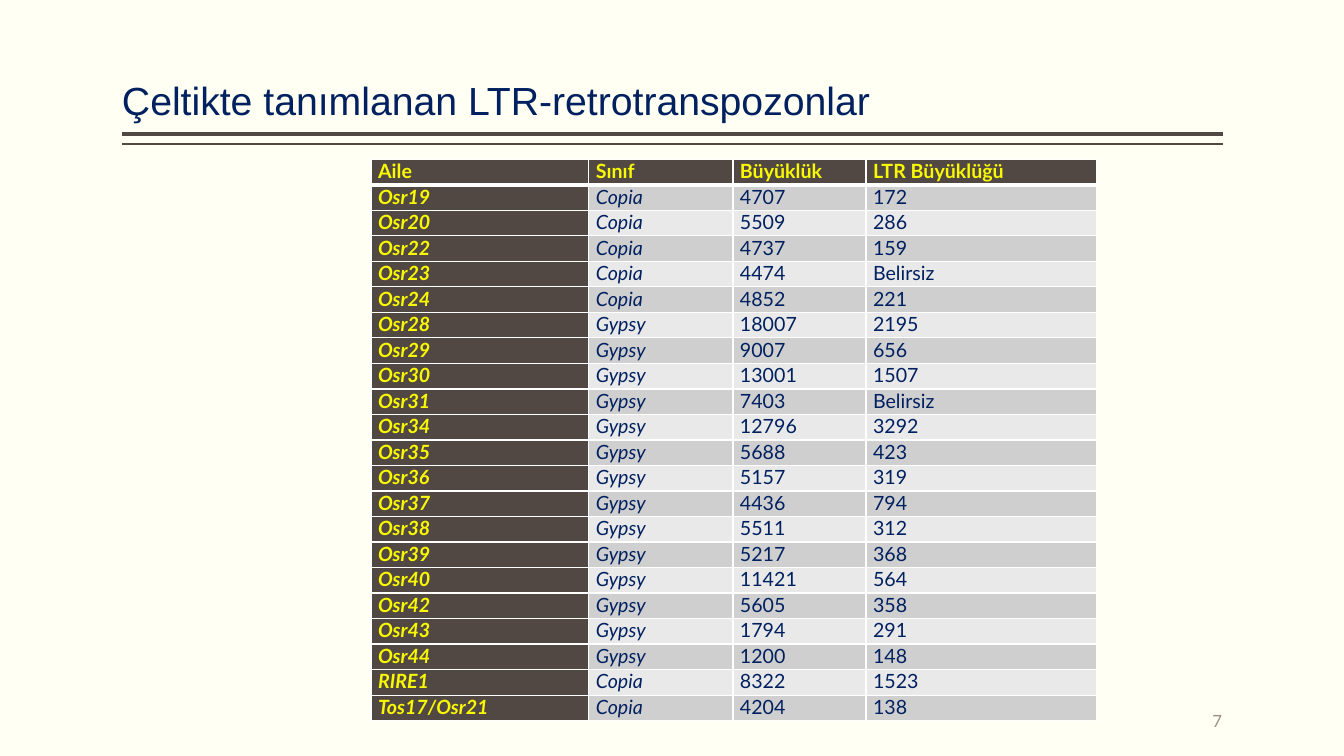
from lxml.etree import SubElement
from pptx import Presentation
from pptx.dml.color import RGBColor
from pptx.enum.shapes import MSO_CONNECTOR
from pptx.enum.text import MSO_ANCHOR as ANCHOR, PP_ALIGN as ALIGN
from pptx.oxml.ns import qn
from pptx.util import Inches, Pt

BROWN, NAVY, YELLOW, WHITE = "514843", "002060", "F9F900", "FFFFFF"
BANDS = ["D0CFCF", "E9E9E9"]
LEFT, RIGHT = 1.21, 12.13
HEADER = ("Aile", "Sınıf", "Büyüklük", "LTR Büyüklüğü")
FAMILIES = [
    ("Osr19", "Copia", "4707", "172"),
    ("Osr20", "Copia", "5509", "286"),
    ("Osr22", "Copia", "4737", "159"),
    ("Osr23", "Copia", "4474", "Belirsiz"),
    ("Osr24", "Copia", "4852", "221"),
    ("Osr28", "Gypsy", "18007", "2195"),
    ("Osr29", "Gypsy", "9007", "656"),
    ("Osr30", "Gypsy", "13001", "1507"),
    ("Osr31", "Gypsy", "7403", "Belirsiz"),
    ("Osr34", "Gypsy", "12796", "3292"),
    ("Osr35", "Gypsy", "5688", "423"),
    ("Osr36", "Gypsy", "5157", "319"),
    ("Osr37", "Gypsy", "4436", "794"),
    ("Osr38", "Gypsy", "5511", "312"),
    ("Osr39", "Gypsy", "5217", "368"),
    ("Osr40", "Gypsy", "11421", "564"),
    ("Osr42", "Gypsy", "5605", "358"),
    ("Osr43", "Gypsy", "1794", "291"),
    ("Osr44", "Gypsy", "1200", "148"),
    ("RIRE1", "Copia", "8322", "1523"),
    ("Tos17/Osr21", "Copia", "4204", "138"),
]


def paint(color_format, color):
    """Set a fill or line colour from a hex string."""
    color_format.solid()
    color_format.fore_color.rgb = RGBColor.from_string(color)


def write(holder, text, size=14, font="Lato", color=NAVY, bold=False, italic=False,
          align=ALIGN.LEFT, anchor=ANCHOR.TOP, margins=(0, 0.05, 0, 0.05)):
    """Put one formatted paragraph in a text frame or a table cell."""
    holder.margin_left, holder.margin_top, holder.margin_right, holder.margin_bottom = map(
        Inches, margins)
    holder.vertical_anchor = anchor
    frame = getattr(holder, "text_frame", holder)
    frame.word_wrap = True
    paragraph = frame.paragraphs[0]
    paragraph.alignment = align
    run = paragraph.add_run()
    run.text = text
    run.font.size, run.font.name = Pt(size), font
    run.font.bold, run.font.italic = bold, italic
    paint(run.font.fill, color)
    return paragraph


presentation = Presentation()
presentation.slide_width, presentation.slide_height = Inches(13.33), Inches(7.5)
slide = presentation.slides.add_slide(presentation.slide_layouts[5])
paint(slide.background.fill, "FFFFF3")

# Title and the double rule below it
title = slide.shapes.title
title.left, title.top = Inches(LEFT), Inches(0.08)
title.width, title.height = Inches(RIGHT - LEFT), Inches(1.2)
heading = write(title.text_frame, "Çeltikte tanımlanan LTR-retrotranspozonlar",
                size=28, font="Arial", anchor=ANCHOR.BOTTOM)
heading.line_spacing = 0.9

for y, weight in [(1.33, 3), (1.43, 1)]:
    rule = slide.shapes.add_connector(
        MSO_CONNECTOR.STRAIGHT, Inches(RIGHT), Inches(y), Inches(LEFT), Inches(y))
    paint(rule.line.fill, BROWN)
    rule.line.width = Pt(weight)
    SubElement(rule._element.spPr, qn("a:effectLst"))

# Table of families
rows = [HEADER] + FAMILIES
table = slide.shapes.add_table(len(rows), len(HEADER), Inches(3.68), Inches(1.58),
                               Inches(7.2), Inches(5.57)).table
for column, width in zip(table.columns, [2.16, 1.43, 1.32, 2.29]):
    column.width = Inches(width)

for row_index, values in enumerate(rows):
    table.rows[row_index].height = Inches(5.57 / len(rows))
    is_header = row_index == 0
    for column_index, value in enumerate(values):
        cell = table.cell(row_index, column_index)
        is_dark = is_header or column_index == 0
        write(cell, value, color=YELLOW if is_dark else NAVY, bold=is_dark,
              italic=not is_header and column_index < 2,
              align=ALIGN.JUSTIFY, margins=(0.07, 0, 0.07, 0))
        properties = cell._tc.get_or_add_tcPr()
        for side in ("lnL", "lnR", "lnT", "lnB"):
            under_header = (row_index, side) in [(0, "lnB"), (1, "lnT")]
            border = SubElement(properties, qn(f"a:{side}"),
                                w=str(Pt(3 if under_header else 1)))
            border_fill = SubElement(border, qn("a:solidFill"))
            SubElement(border_fill, qn("a:srgbClr"), val=WHITE)
        paint(cell.fill, BROWN if is_dark else BANDS[(row_index - 1) % 2])

# Page number
page_number = slide.shapes.add_textbox(Inches(10.12), Inches(6.95), Inches(2), Inches(0.4))
write(page_number.text_frame, "7", size=12, color="9D8F88",
      align=ALIGN.RIGHT, anchor=ANCHOR.MIDDLE)

presentation.save("out.pptx")
